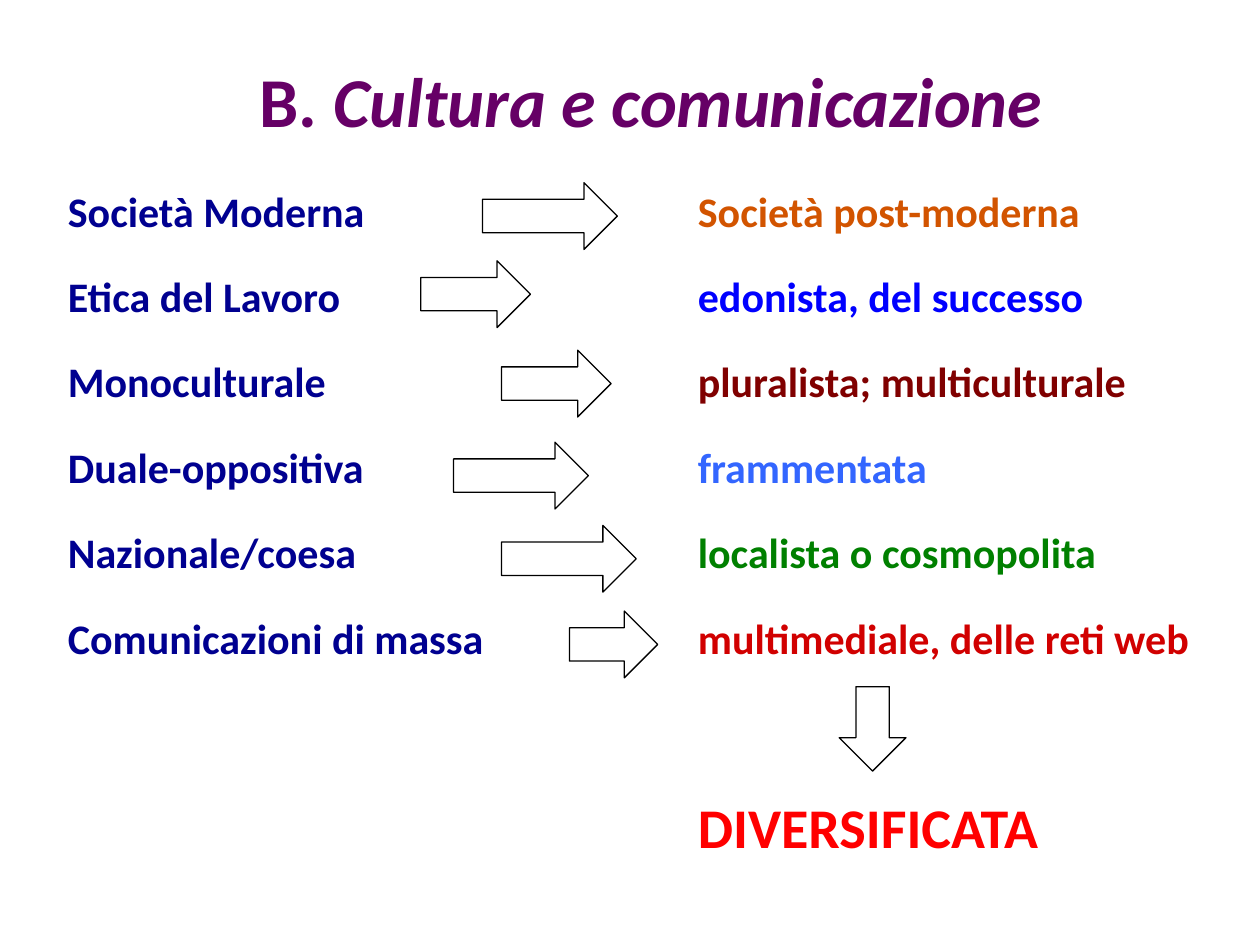
from lxml.etree import SubElement as Sub
from pptx import Presentation
from pptx.dml.color import RGBColor
from pptx.enum.shapes import MSO_SHAPE as Shape
from pptx.enum.text import MSO_ANCHOR as Anchor, PP_ALIGN as Align
from pptx.oxml.ns import qn
from pptx.util import Inches, Pt

NAVY, PURPLE, RED = "000090", "660066", "FF0000"

# left term, right term, right colour
ROWS = [
    ("Società Moderna", "Società post-moderna", "D25400"),
    ("Etica del Lavoro", "edonista, del successo", "0000FF"),
    ("Monoculturale", "pluralista; multiculturale", "800000"),
    ("Duale-oppositiva", "frammentata", "3366FF"),
    ("Nazionale/coesa", "localista o cosmopolita", "008000"),
    ("Comunicazioni di massa", "multimediale, delle reti web", "D10000"),
]
# left, top, width, turn
ARROWS = [
    (3.83, 1.45, 1.07, 0),
    (3.34, 2.07, 0.87, 0),
    (3.98, 2.78, 0.87, 0),
    (3.6, 3.51, 1.07, 0),
    (3.98, 4.17, 1.07, 0),
    (4.52, 4.85, 0.7, 0),
    (6.59, 5.52, 0.67, 90),
]


def color(code):
    return RGBColor.from_string(code)


def add_box(slide, left, top, width, height):
    box = slide.shapes.add_textbox(
        Inches(left), Inches(top), Inches(width), Inches(height))
    box.text_frame.word_wrap = True
    return box.text_frame


def add_run(para, text, size, code, italic=False):
    run = para.add_run()
    run.text = text
    font = run.font
    font.name, font.size = "Calibri", Pt(size)
    font.bold, font.italic = True, italic
    font.color.rgb = color(code)


def set_tab(para, pos):
    """Give the paragraph one left tab stop, pos inches in."""
    tabs = Sub(para._p.get_or_add_pPr(), qn("a:tabLst"))
    Sub(tabs, qn("a:tab"), pos=str(Inches(pos)), algn="l")


def add_title(slide):
    frame = add_box(slide, 1.19, 0.31, 7.95, 0.9)
    frame.vertical_anchor = Anchor.MIDDLE
    para = frame.paragraphs[0]
    para.alignment = Align.CENTER
    para.line_spacing = Pt(52)
    add_run(para, "B. ", 40, PURPLE)
    add_run(para, "Cultura e comunicazione", 40, PURPLE, italic=True)


def add_terms(slide):
    frame = add_box(slide, 0.44, 1.42, 9.21, 5.68)
    for i, (left, right, code) in enumerate(ROWS):
        para = frame.add_paragraph() if i else frame.paragraphs[0]
        set_tab(para, 5)
        if i:
            para.space_before = Pt(20)
        add_run(para, left + "\t", 24, NAVY)
        add_run(para, right, 24, code)
    para = frame.add_paragraph()
    set_tab(para, 5)
    para.space_before = Pt(74)
    add_run(para, "\tDIVERSIFICATA", 32, RED)


def add_arrow(slide, left, top, width, turn):
    arrow = slide.shapes.add_shape(
        Shape.RIGHT_ARROW, Inches(left), Inches(top),
        Inches(width), Inches(0.53))
    arrow.rotation = turn
    arrow.shadow.inherit = False
    arrow.fill.solid()
    arrow.fill.fore_color.rgb = color("FFFFFF")
    arrow.line.color.rgb = color("000000")
    arrow.line.width = Pt(0.75)


def main():
    deck = Presentation()
    deck.slide_width, deck.slide_height = Inches(10), Inches(7.5)
    slide = deck.slides.add_slide(deck.slide_layouts[6])
    add_title(slide)
    add_terms(slide)
    for arrow in ARROWS:
        add_arrow(slide, *arrow)
    deck.save("out.pptx")


if __name__ == "__main__":
    main()
